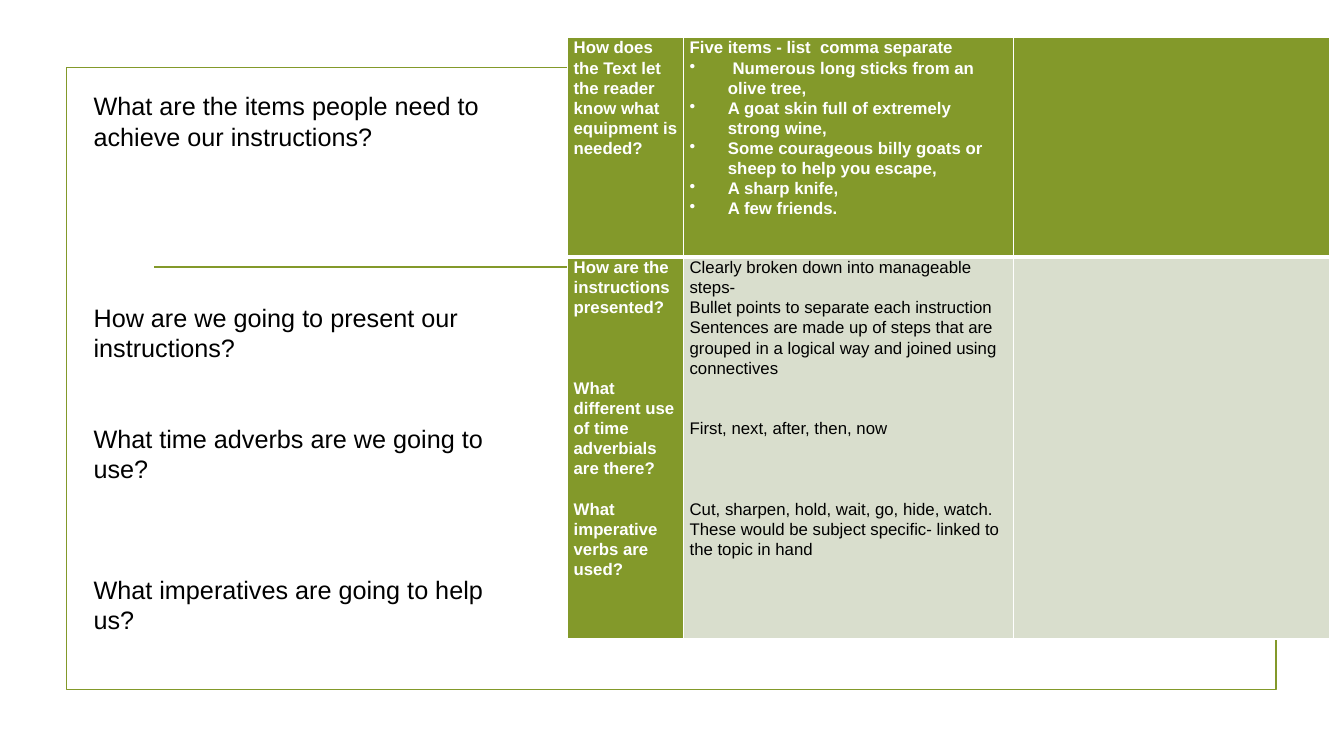
from pptx import Presentation
from pptx.util import Inches, Pt
from pptx.dml.color import RGBColor as RGB
from pptx.enum.shapes import MSO_SHAPE as SHAPE, MSO_CONNECTOR as CONN
from pptx.oxml import parse_xml as parse
from pptx.oxml.ns import nsdecls, qn
from lxml.etree import SubElement as Sub

GREEN, PALE, WHITE, BLACK = "83992A", "D9DECD", "FFFFFF", "000000"


def color(text):
    return RGB.from_string(text)


def write(frame, items, size, tint, bold=False, lead=None):
    for i, (text, gap, dot) in enumerate(items):
        para = frame.paragraphs[0] if i == 0 else frame.add_paragraph()
        para.text = text
        if dot:
            props = para._p.get_or_add_pPr()
            props.set("marL", str(Inches(0.38)))
            props.set("indent", str(-Inches(0.38)))
            Sub(props, qn("a:buChar"), char="•")
            tabs = Sub(props, qn("a:tabLst"))
            Sub(tabs, qn("a:tab"), pos=str(Inches(0.5)), algn="l")
        if lead:
            para.line_spacing = lead
        if gap:
            para.space_before = Pt(gap * size * 1.2)
        for run in para.runs:
            run.font.name = "Arial"
            run.font.size = Pt(size)
            run.font.bold = bold
            run.font.color.rgb = color(tint)


deck = Presentation()
deck.slide_width, deck.slide_height = Inches(13.33), Inches(7.5)
slide = deck.slides.add_slide(deck.slide_layouts[6])
shapes = slide.shapes

frame = shapes.add_shape(SHAPE.RECTANGLE, Inches(0.66), Inches(0.67), Inches(12), Inches(6.17))
frame.shadow.inherit = False
frame.fill.background()
rule = shapes.add_connector(CONN.STRAIGHT, Inches(1.53), Inches(2.65), Inches(11.81), Inches(2.65))
Sub(rule._element.spPr, qn("a:effectLst"))
for item in (frame, rule):
    item.line.color.rgb = color(GREEN)
    item.line.width = Pt(1.25)

widths = [1.15, 3.27, 3.14]
heights = [2.18, 3.79]
cells = [
    [
        [("How does the Text let the reader know what equipment is needed?", 0, False)],
        [
            ("Five items - list  comma separate", 0, False),
            (" Numerous long sticks from an olive tree,", 0, True),
            ("A goat skin full of extremely strong wine,", 0, True),
            ("Some courageous billy goats or sheep to help you escape,", 0, True),
            ("A sharp knife,", 0, True),
            ("A few friends.", 0, True),
        ],
        [],
    ],
    [
        [
            ("How are the instructions presented?", 0, False),
            ("What different use of time adverbials are there?", 3, False),
            ("What imperative verbs are used?", 1, False),
        ],
        [
            ("Clearly broken down into manageable steps-", 0, False),
            ("Bullet points to separate each instruction", 0, False),
            ("Sentences are made up of steps that are grouped in a logical way "
             "and joined using connectives", 0, False),
            ("First, next, after, then, now", 2, False),
            ("Cut, sharpen, hold, wait, go, hide, watch. These would be subject "
             "specific- linked to the topic in hand", 3, False),
        ],
        [],
    ],
]
table = shapes.add_table(2, 3, Inches(5.63), Inches(0.37),
                         Inches(sum(widths)), Inches(sum(heights))).table
for col, width in zip(table.columns, widths):
    col.width = Inches(width)
for row, height in zip(table.rows, heights):
    row.height = Inches(height)
for r, line in enumerate(cells):
    for c, items in enumerate(line):
        cell = table.cell(r, c)
        head = r == 0 or c == 0
        cell.margin_left = cell.margin_right = Inches(0.06)
        cell.margin_top = cell.margin_bottom = 0
        cell.fill.solid()
        cell.fill.fore_color.rgb = color(GREEN if head else PALE)
        write(cell.text_frame, items, 12, WHITE if head else BLACK, head, 1.07)
        sides = {"L": 1, "R": 1, "T": 3 if r else 1, "B": 1 if r else 3}
        for i, (side, width) in enumerate(sides.items()):
            edge = parse(
                f'<a:ln{side} {nsdecls("a")} w="{Pt(width)}"><a:solidFill>'
                f'<a:srgbClr val="{WHITE}"/></a:solidFill></a:ln{side}>')
            cell._tc.get_or_add_tcPr().insert(i, edge)

box = shapes.add_textbox(Inches(0.83), Inches(0.85), Inches(4.45), Inches(6.16))
box.text_frame.word_wrap = True
asks = [
    ("What are the items people need to achieve our instructions?", 0, False),
    ("How are we going to present our instructions?", 5, False),
    ("What time adverbs are we going to use?", 2, False),
    ("What imperatives are going to help us?", 3, False),
]
write(box.text_frame, asks, 18, BLACK)

deck.save("out.pptx")
